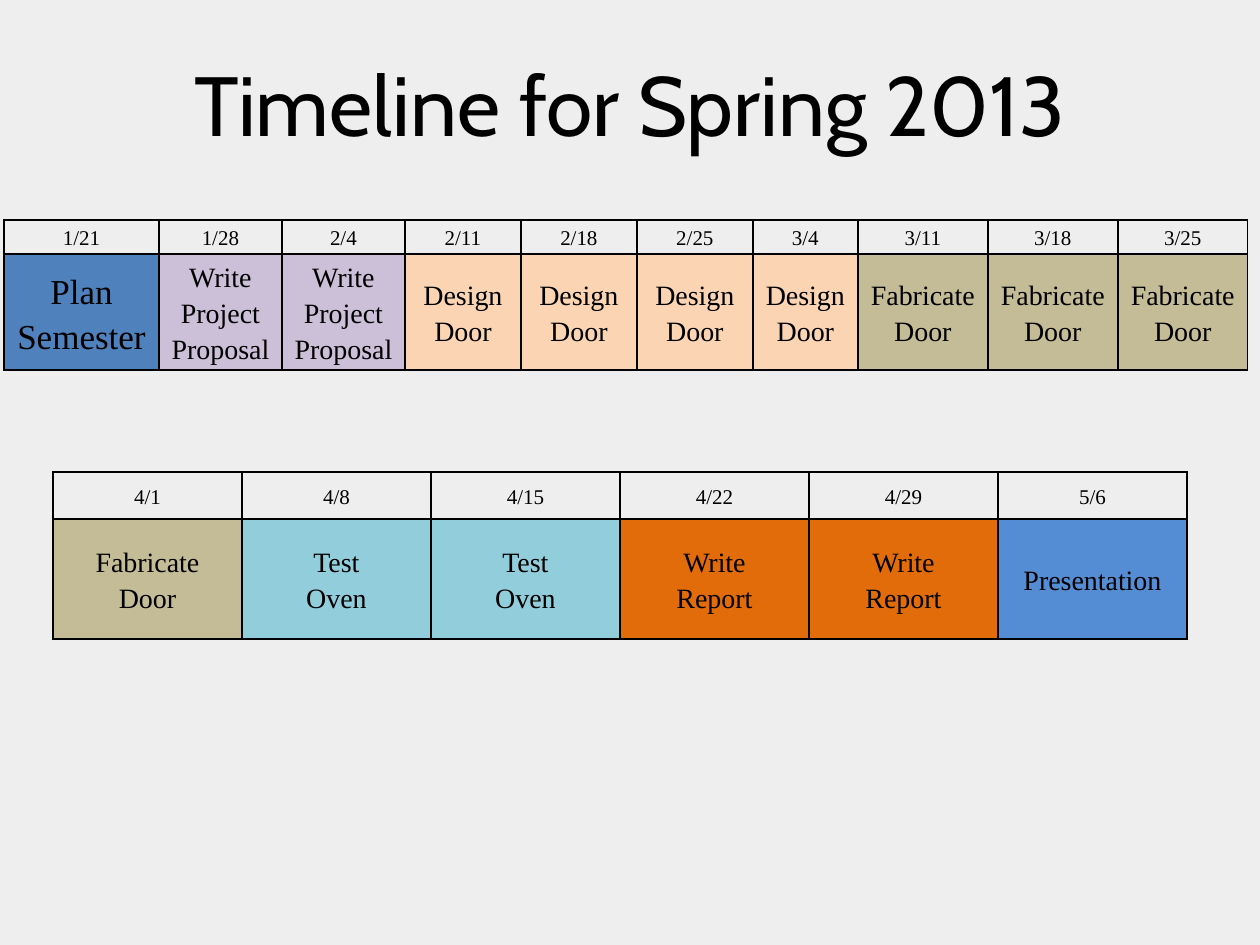
from pptx import Presentation, util as u
from pptx.dml.color import RGBColor
from pptx.enum import text
from pptx.oxml import parse_xml
from pptx.oxml.ns import nsdecls

PX = u.Inches(1) / 126
BACKGROUND = RGBColor(0xEE, 0xEE, 0xEE)
BLACK = RGBColor(0x00, 0x00, 0x00)
BLUE = RGBColor(0x4F, 0x81, 0xBD)
LILAC = RGBColor(0xCC, 0xC0, 0xD9)
PEACH = RGBColor(0xFB, 0xD4, 0xB4)
KHAKI = RGBColor(0xC4, 0xBC, 0x96)
AQUA = RGBColor(0x92, 0xCD, 0xDC)
ORANGE = RGBColor(0xE3, 0x6C, 0x0A)
SKY = RGBColor(0x54, 0x8D, 0xD4)

PLAN = ("Plan\nSemester", BLUE, 20)
PROPOSAL = ("Write\nProject\nProposal", LILAC, 16)
DESIGN = ("Design\nDoor", PEACH, 16)
FABRICATE = ("Fabricate\nDoor", KHAKI, 16)
TEST = ("Test\nOven", AQUA, 16)
REPORT = ("Write\nReport", ORANGE, 16)
PRESENTATION = ("Presentation", SKY, 16)

WINTER_DATES = ["1/21", "1/28", "2/4", "2/11", "2/18", "2/25", "3/4", "3/11", "3/18", "3/25"]
WINTER_TASKS = [PLAN] + [PROPOSAL] * 2 + [DESIGN] * 4 + [FABRICATE] * 3
WINTER_WIDTHS = [155] + [123] * 2 + [116] * 3 + [105] + [130] * 3
SPRING_DATES = ["4/1", "4/8", "4/15", "4/22", "4/29", "5/6"]
SPRING_TASKS = [FABRICATE] + [TEST] * 2 + [REPORT] * 2 + [PRESENTATION]
SPRING_WIDTHS = [189] * 6


def px(length):
    """Turn a length in px into EMU."""
    return u.Emu(round(length * PX))


def set_all(target, values):
    """Set each named attribute on the target."""
    for name, value in values.items():
        setattr(target, name, value)


def write(frame, wording, font, **spacing):
    """Write centred lines into a text frame, one paragraph for each."""
    frame.text = wording
    for paragraph in frame.paragraphs:
        set_all(paragraph, {"alignment": text.PP_ALIGN.CENTER, **spacing})
        set_all(paragraph.font, font)
        paragraph.font.color.rgb = BLACK


def add_borders(cell):
    """Draw a thin black line on all four sides of a cell."""
    properties = cell._tc.get_or_add_tcPr()
    for position, side in enumerate(("lnL", "lnR", "lnT", "lnB")):
        properties.insert(position, parse_xml(
            f'<a:{side} {nsdecls("a")} w="{u.Pt(1)}"><a:solidFill>'
            f'<a:srgbClr val="{BLACK}"/></a:solidFill></a:{side}>'))


def fill_cell(cell, wording, color, size):
    """Give a cell its text, fill and borders."""
    set_all(cell, {"margin_left": px(9), "margin_right": px(9), "margin_top": 0,
                   "margin_bottom": 0, "vertical_anchor": text.MSO_ANCHOR.MIDDLE})
    write(cell.text_frame, wording,
          {"name": "Times New Roman", "size": u.Pt(size)}, line_spacing=1.15)
    if color is None:
        cell.fill.background()
    else:
        cell.fill.solid()
        cell.fill.fore_color.rgb = color
    add_borders(cell)


def add_title(slide, left, top, width, height):
    """Place the slide title at the bottom of its box."""
    title = slide.shapes.add_textbox(px(left), px(top), px(width), px(height))
    set_all(title.text_frame, {"word_wrap": True,
                               "vertical_anchor": text.MSO_ANCHOR.BOTTOM})
    write(title.text_frame, "Timeline for Spring 2013",
          {"name": "Cabin", "size": u.Pt(48)})


def add_timeline(slide, left, top, widths, heights, dates, tasks):
    """Place a table of weekly dates above their tasks."""
    timeline = slide.shapes.add_table(2, len(dates), px(left), px(top),
                                      px(sum(widths)), px(sum(heights))).table
    set_all(timeline, {"first_row": False, "horz_banding": False})
    for row, height in zip(timeline.rows, heights):
        row.height = px(height)
    for week, (width, date, task) in enumerate(zip(widths, dates, tasks)):
        timeline.columns[week].width = px(width)
        fill_cell(timeline.cell(0, week), date, None, 12)
        fill_cell(timeline.cell(1, week), *task)


def main():
    """Build and save the slide."""
    deck = Presentation()
    set_all(deck, {"slide_width": px(1260), "slide_height": px(945)})
    slide = deck.slides.add_slide(deck.slide_layouts[6])
    slide.background.fill.solid()
    slide.background.fill.fore_color.rgb = BACKGROUND
    add_title(slide, 63, 3, 1134, 157)
    add_timeline(slide, 4, 220, WINTER_WIDTHS, (34, 102), WINTER_DATES, WINTER_TASKS)
    add_timeline(slide, 53, 472, SPRING_WIDTHS, (47, 120), SPRING_DATES, SPRING_TASKS)
    deck.save("out.pptx")


if __name__ == "__main__":
    main()
